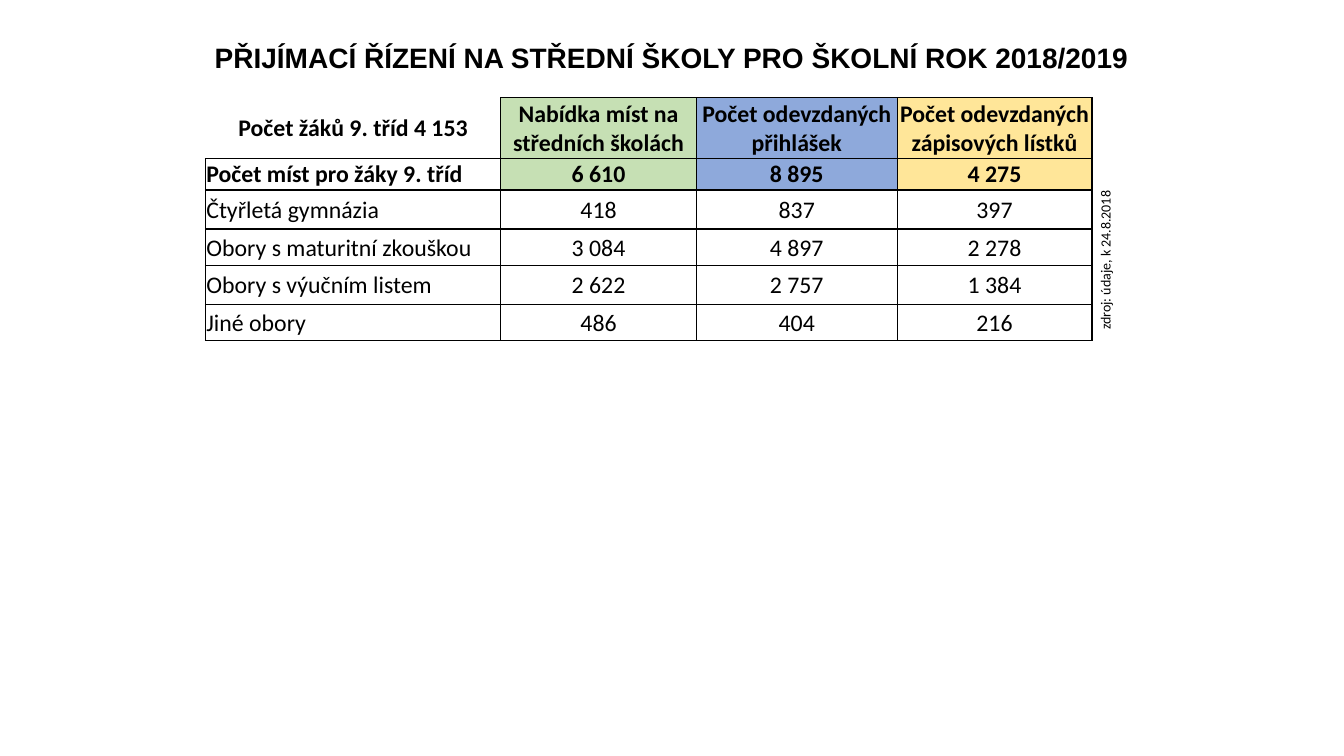
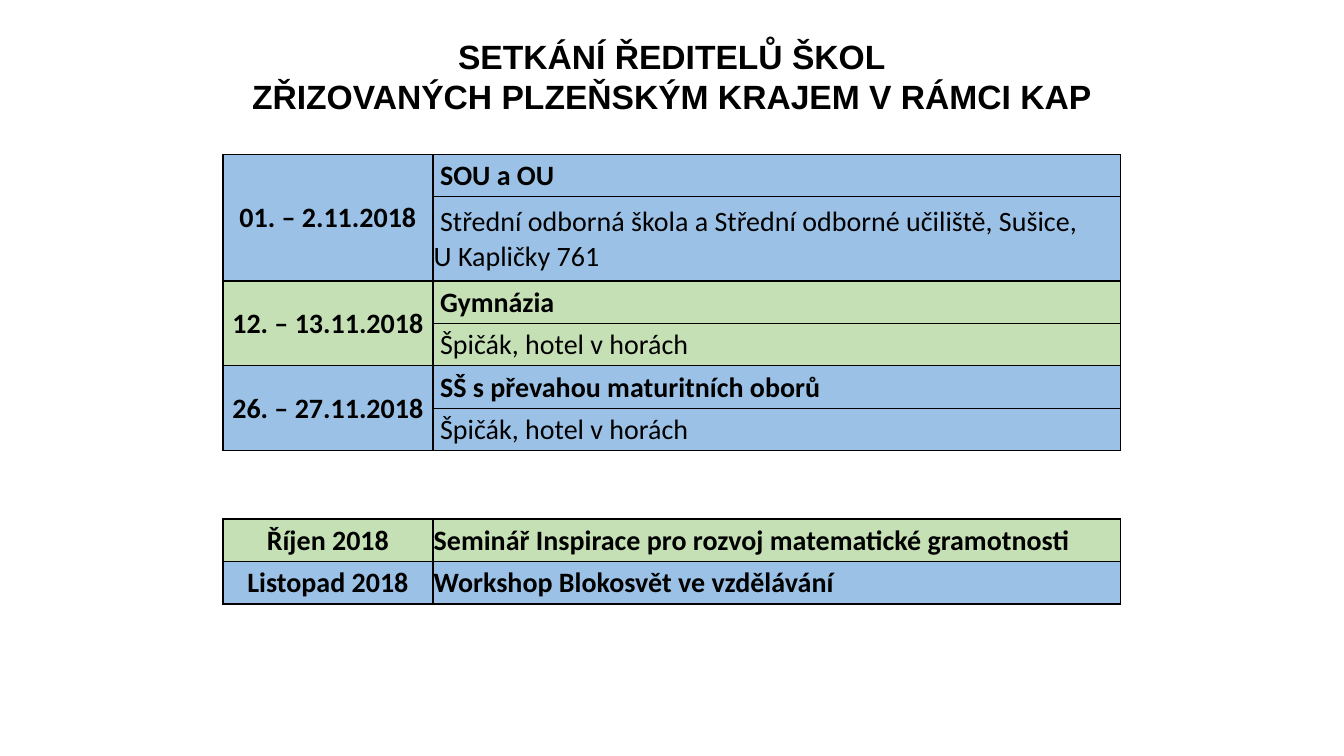
import pptx
import pptx.dml.color
import pptx.enum.text
import pptx.oxml
import pptx.oxml.ns
import pptx.util
from lxml import etree

Cm = pptx.util.Cm
Pt = pptx.util.Pt
RGBColor = pptx.dml.color.RGBColor
ALIGN = pptx.enum.text.PP_ALIGN
ANCHOR = pptx.enum.text.MSO_ANCHOR

# Shared look
BLACK = RGBColor(0x00, 0x00, 0x00)
OFFER_GREEN = RGBColor(0xC6, 0xE0, 0xB4)
APPLICATION_BLUE = RGBColor(0x8E, 0xA9, 0xDB)
ENROLMENT_YELLOW = RGBColor(0xFF, 0xE6, 0x99)
MEETING_BLUE = RGBColor(0x9B, 0xC2, 0xE6)
MEETING_GREEN = RGBColor(0xC5, 0xE0, 0xB4)
TITLE_FONT = "Arial"
BODY_FONT = "Calibri"
TITLE_ONLY_LAYOUT = 5
ALL_SIDES = "LRTB"
CELL_MARGIN = Cm(0.02)
MEETING_INDENT = Cm(0.16)

# Slide content
ADMISSION_COLUMNS = [7.44, 4.93, 5.06, 4.91]
ADMISSION_HEIGHTS = [1.54, 0.79, 0.98, 0.93, 0.97, 0.91]
ADMISSION_FILLS = [None, OFFER_GREEN, APPLICATION_BLUE, ENROLMENT_YELLOW]
ADMISSION_ROWS = [
    ["Počet žáků 9. tříd 4 153", "Nabídka míst na středních školách",
     "Počet odevzdaných přihlášek", "Počet odevzdaných zápisových lístků"],
    ["Počet míst pro žáky 9. tříd", "6 610", "8 895", "4 275"],
    ["Čtyřletá gymnázia", "418", "837", "397"],
    ["Obory s maturitní zkouškou", "3 084", "4 897", "2 278"],
    ["Obory s výučním listem", "2 622", "2 757", "1 384"],
    ["Jiné obory", "486", "404", "216"],
]

SCHEDULE_COLUMNS = [5.29, 17.32]
ROW_HEIGHT, VENUE_HEIGHT, GAP_HEIGHT = 1.07, 2.12, 1.72
SCHEDULE_HEIGHTS = ([ROW_HEIGHT, VENUE_HEIGHT] + [ROW_HEIGHT] * 4
                    + [GAP_HEIGHT] + [ROW_HEIGHT] * 2)
MEETINGS = [
    ("01. – 2.11.2018", "SOU a OU",
     "Střední odborná škola a Střední odborné učiliště, Sušice,\vU Kapličky 761",
     MEETING_BLUE),
    ("12. – 13.11.2018", "Gymnázia", "Špičák, hotel v horách", MEETING_GREEN),
    ("26. – 27.11.2018", "SŠ s převahou maturitních oborů",
     "Špičák, hotel v horách", MEETING_BLUE),
]
EVENTS = [
    ("Říjen 2018", "Seminář Inspirace pro rozvoj matematické gramotnosti",
     MEETING_GREEN),
    ("Listopad 2018", "Workshop Blokosvět ve vzdělávání", MEETING_BLUE),
]


def format_text(text_frame, font_name, size, bold=False, align=ALIGN.LEFT):
    for paragraph in text_frame.paragraphs:
        paragraph.alignment = align
        for run in paragraph.runs:
            run.font.name = font_name
            run.font.size = Pt(size)
            run.font.bold = bold
            run.font.color.rgb = BLACK


def place(shape, left, top, width, height):
    shape.left, shape.top = Cm(left), Cm(top)
    shape.width, shape.height = Cm(width), Cm(height)


def add_titled_slide(presentation, text, size, box):
    slide = presentation.slides.add_slide(
        presentation.slide_layouts[TITLE_ONLY_LAYOUT])
    title = slide.shapes.title
    place(title, *box)
    frame = title.text_frame
    frame.text = text
    frame.word_wrap = True
    frame.auto_size = pptx.enum.text.MSO_AUTO_SIZE.NONE
    frame.vertical_anchor = ANCHOR.MIDDLE
    format_text(frame, TITLE_FONT, size, True, ALIGN.CENTER)
    return slide


def add_plain_table(slide, left, top, columns, heights):
    table = slide.shapes.add_table(
        len(heights), len(columns), Cm(left), Cm(top),
        Cm(sum(columns)), Cm(sum(heights))).table
    table.first_row = table.horz_banding = False
    for column, width in zip(table.columns, columns):
        column.width = Cm(width)
    for row, height in zip(table.rows, heights):
        row.height = Cm(height)
    return table


def set_borders(cell, visible_sides):
    properties = cell._tc.get_or_add_tcPr()
    for side in ALL_SIDES:
        line = etree.SubElement(properties, pptx.oxml.ns.qn("a:ln" + side))
        line.set("w", str(Pt(1)))
        if side in visible_sides:
            fill = etree.SubElement(line, pptx.oxml.ns.qn("a:solidFill"))
            color = etree.SubElement(fill, pptx.oxml.ns.qn("a:srgbClr"))
            color.set("val", str(BLACK))
        else:
            etree.SubElement(line, pptx.oxml.ns.qn("a:noFill"))


def fill_cell(cell, text, size, bold=False, align=ALIGN.LEFT, color=None,
              sides=ALL_SIDES, indent=0):
    set_borders(cell, sides)
    if color is None:
        cell.fill.background()
    else:
        cell.fill.solid()
        cell.fill.fore_color.rgb = color
    cell.margin_left = cell.margin_right = cell.margin_top = CELL_MARGIN
    cell.margin_bottom = 0
    cell.vertical_anchor = ANCHOR.MIDDLE
    if text:
        cell.text_frame.text = text
        format_text(cell.text_frame, BODY_FONT, size, bold, align)
    if indent:
        paragraph = cell.text_frame.paragraphs[0]
        paragraph._p.get_or_add_pPr().set("indent", str(indent))


def add_source_note(slide, text):
    note = slide.shapes.add_textbox(Cm(25.86), Cm(6.22), Cm(3.99), Cm(0.69))
    note.rotation = 270
    note.text_frame.word_wrap = True
    note.text_frame.margin_right = 0
    note.text_frame.text = text
    format_text(note.text_frame, BODY_FONT, 10)


def add_admissions_slide(presentation):
    slide = add_titled_slide(
        presentation, "PŘIJÍMACÍ ŘÍZENÍ NA STŘEDNÍ ŠKOLY PRO ŠKOLNÍ ROK 2018/2019",
        20, (4.57, 0.41, 24.71, 2.06))
    table = add_plain_table(slide, 5.18, 2.46, ADMISSION_COLUMNS, ADMISSION_HEIGHTS)
    for row, texts in enumerate(ADMISSION_ROWS):
        is_summary = row < 2
        for column, text in enumerate(texts):
            is_label = column == 0 and row > 0
            is_corner = row == column == 0
            fill_cell(table.cell(row, column), text, 17, is_summary,
                      ALIGN.LEFT if is_label else ALIGN.CENTER,
                      ADMISSION_FILLS[column] if is_summary else None,
                      "RB" if is_corner else ALL_SIDES)
    add_source_note(slide, "zdroj: údaje, k 24.8.2018")


def add_meetings_slide(presentation):
    slide = add_titled_slide(
        presentation,
        "SETKÁNÍ ŘEDITELŮ ŠKOL\vZŘIZOVANÝCH PLZEŇSKÝM KRAJEM V RÁMCI KAP",
        24, (5.92, 0.76, 22.02, 2.31))
    table = add_plain_table(slide, 5.62, 3.89, SCHEDULE_COLUMNS, SCHEDULE_HEIGHTS)

    # Meetings: the date spans the school type and the venue
    for index, (date, schools, venue, color) in enumerate(MEETINGS):
        row = 2 * index
        table.cell(row, 0).merge(table.cell(row + 1, 0))
        fill_cell(table.cell(row, 0), date, 20, True, ALIGN.CENTER, color)
        fill_cell(table.cell(row + 1, 0), "", 20, color=color)
        fill_cell(table.cell(row, 1), schools, 20, True, color=color,
                  indent=MEETING_INDENT)
        fill_cell(table.cell(row + 1, 1), venue, 20, color=color,
                  indent=MEETING_INDENT)

    # Open row between meetings and events
    gap_row = 2 * len(MEETINGS)
    for column in range(len(SCHEDULE_COLUMNS)):
        fill_cell(table.cell(gap_row, column), "", 20, sides="TB")

    # Events
    for row, (month, event, color) in enumerate(EVENTS, gap_row + 1):
        fill_cell(table.cell(row, 0), month, 20, True, ALIGN.CENTER, color)
        fill_cell(table.cell(row, 1), event, 20, True, color=color)


def main():
    presentation = pptx.Presentation()
    presentation.slide_width = Cm(33.87)
    presentation.slide_height = Cm(19.05)
    add_admissions_slide(presentation)
    add_meetings_slide(presentation)
    presentation.save("out.pptx")


if __name__ == "__main__":
    main()
